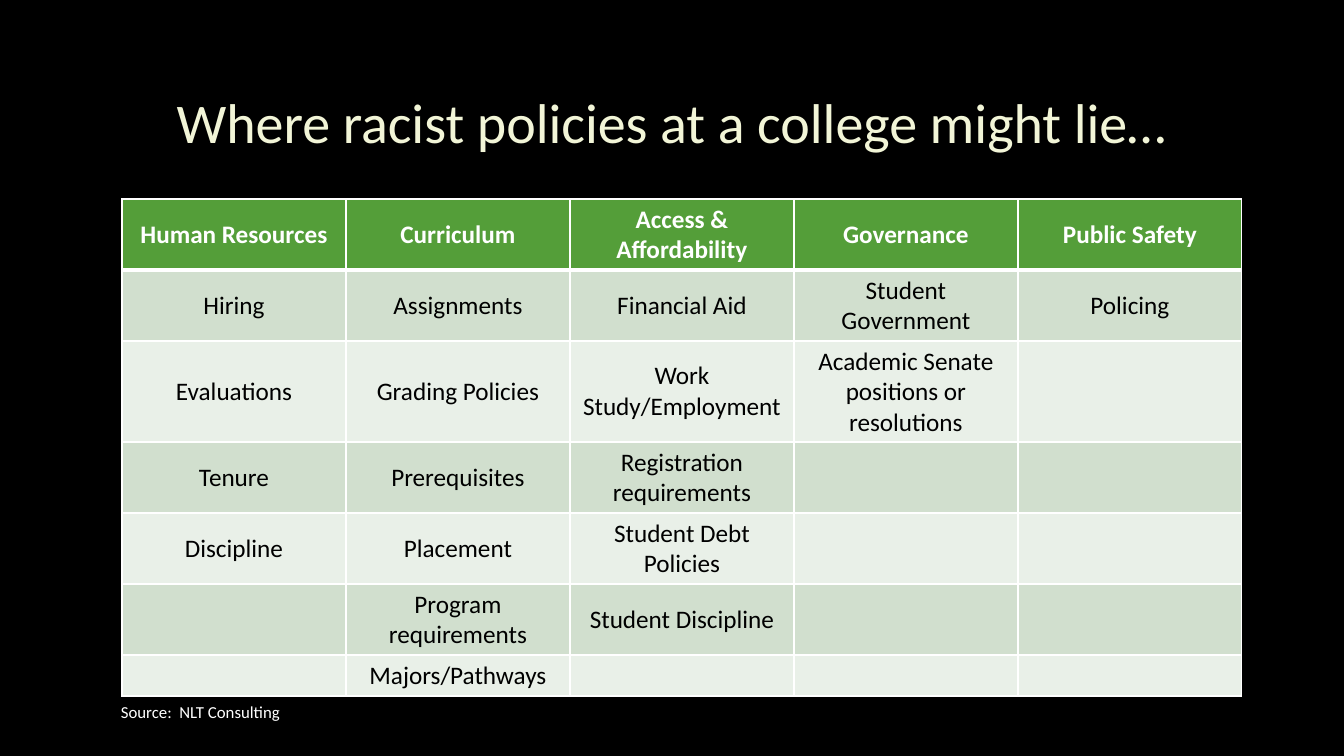
from dataclasses import dataclass

import pptx
import pptx.dml.color
import pptx.enum.text
import pptx.oxml
import pptx.oxml.ns
import pptx.util

PX = 914400 / 100.8
ALIGN = pptx.enum.text.PP_ALIGN
ANCHOR = pptx.enum.text.MSO_ANCHOR


@dataclass(frozen=True)
class Theme:
    font: str = "Calibri"
    background: str = "000000"
    title: str = "F2F5D7"
    light: str = "FFFFFF"
    dark: str = "000000"
    header: str = "549E39"
    bands: tuple = ("D1DFCE", "E9F0E8")
    title_size: int = 40
    table_size: int = 18
    source_size: int = 12
    border: int = 1
    header_border: int = 3


def px(n):
    return pptx.util.Emu(round(n * PX))


def rgb(color):
    return pptx.dml.color.RGBColor.from_string(color)


class Deck:
    def __init__(self, theme):
        self.theme = theme
        self.prs = pptx.Presentation()
        self.prs.slide_width, self.prs.slide_height = px(1344), px(756)
        self.s = self.prs.slides.add_slide(self.prs.slide_layouts[6])
        fill = self.s.background.fill
        fill.solid()
        fill.fore_color.rgb = rgb(theme.background)

    def style(self, p, size, color, align, bold=False):
        p.alignment = align
        p.font.name = self.theme.font
        p.font.size = pptx.util.Pt(size)
        p.font.bold = bold
        p.font.color.rgb = rgb(color)

    def text(self, box, text, size, color, align=ALIGN.LEFT, anchor=ANCHOR.TOP, wrap=True):
        tf = self.s.shapes.add_textbox(*map(px, box)).text_frame
        tf.word_wrap = wrap
        tf.vertical_anchor = anchor
        p = tf.paragraphs[0]
        p.text = text
        self.style(p, size, color, align)

    def borders(self, cell, top, bottom):
        """Draw the four cell borders; widths are in points."""
        tc_pr = cell._tc.get_or_add_tcPr()
        widths = {"L": self.theme.border, "R": self.theme.border, "T": top, "B": bottom}
        for i, (side, width) in enumerate(widths.items()):
            tc_pr.insert(i, pptx.oxml.parse_xml(
                f'<a:ln{side} {pptx.oxml.ns.nsdecls("a")} w="{pptx.util.Pt(width)}">'
                f'<a:solidFill><a:srgbClr val="{self.theme.light}"/></a:solidFill>'
                f'</a:ln{side}>'))

    def table(self, left, top, col_width, row_heights, rows):
        """Build a table from rows of text, the first row being the header."""
        t = self.theme
        cols = len(rows[0])
        table = self.s.shapes.add_table(
            len(rows), cols, px(left), px(top),
            px(col_width * cols), px(sum(row_heights))).table
        table.horz_banding = False
        for col in table.columns:
            col.width = px(col_width)
        for i, (row, height) in enumerate(zip(rows, row_heights)):
            table.rows[i].height = px(height)
            head = i == 0
            for j, text in enumerate(row):
                cell = table.cell(i, j)
                cell.vertical_anchor = ANCHOR.MIDDLE
                cell.fill.solid()
                cell.fill.fore_color.rgb = rgb(t.header if head else t.bands[(i - 1) % 2])
                self.borders(cell, t.header_border if i == 1 else t.border,
                             t.header_border if head else t.border)
                p = cell.text_frame.paragraphs[0]
                p.text = text
                self.style(p, t.table_size, t.light if head else t.dark, ALIGN.CENTER, head)


POLICY_AREAS = {
    "Human Resources": ["Hiring", "Evaluations", "Tenure", "Discipline"],
    "Curriculum": ["Assignments", "Grading Policies", "Prerequisites", "Placement",
                   "Program requirements", "Majors/Pathways"],
    "Access & Affordability": ["Financial Aid", "Work Study/Employment",
                               "Registration requirements", "Student Debt Policies",
                               "Student Discipline"],
    "Governance": ["Student Government", "Academic Senate positions or resolutions"],
    "Public Safety": ["Policing"],
}
LINES_PER_ROW = (2, 2, 3, 2, 2, 2, 1)


def main():
    theme = Theme()
    deck = Deck(theme)
    deck.text((101, 68, 1141, 107), "Where racist policies at a college might lie…",
              theme.title_size, theme.title, ALIGN.CENTER, ANCHOR.MIDDLE)
    depth = len(LINES_PER_ROW) - 1
    columns = [[area, *items, *[""] * (depth - len(items))]
               for area, items in POLICY_AREAS.items()]
    heights = [41 + 30 * (lines - 1) for lines in LINES_PER_ROW]
    deck.table(122, 199, 224, heights, list(zip(*columns)))
    deck.text((111, 697, 180, 30), "Source:  NLT Consulting",
              theme.source_size, theme.light, wrap=False)
    deck.prs.save("out.pptx")


if __name__ == "__main__":
    main()
